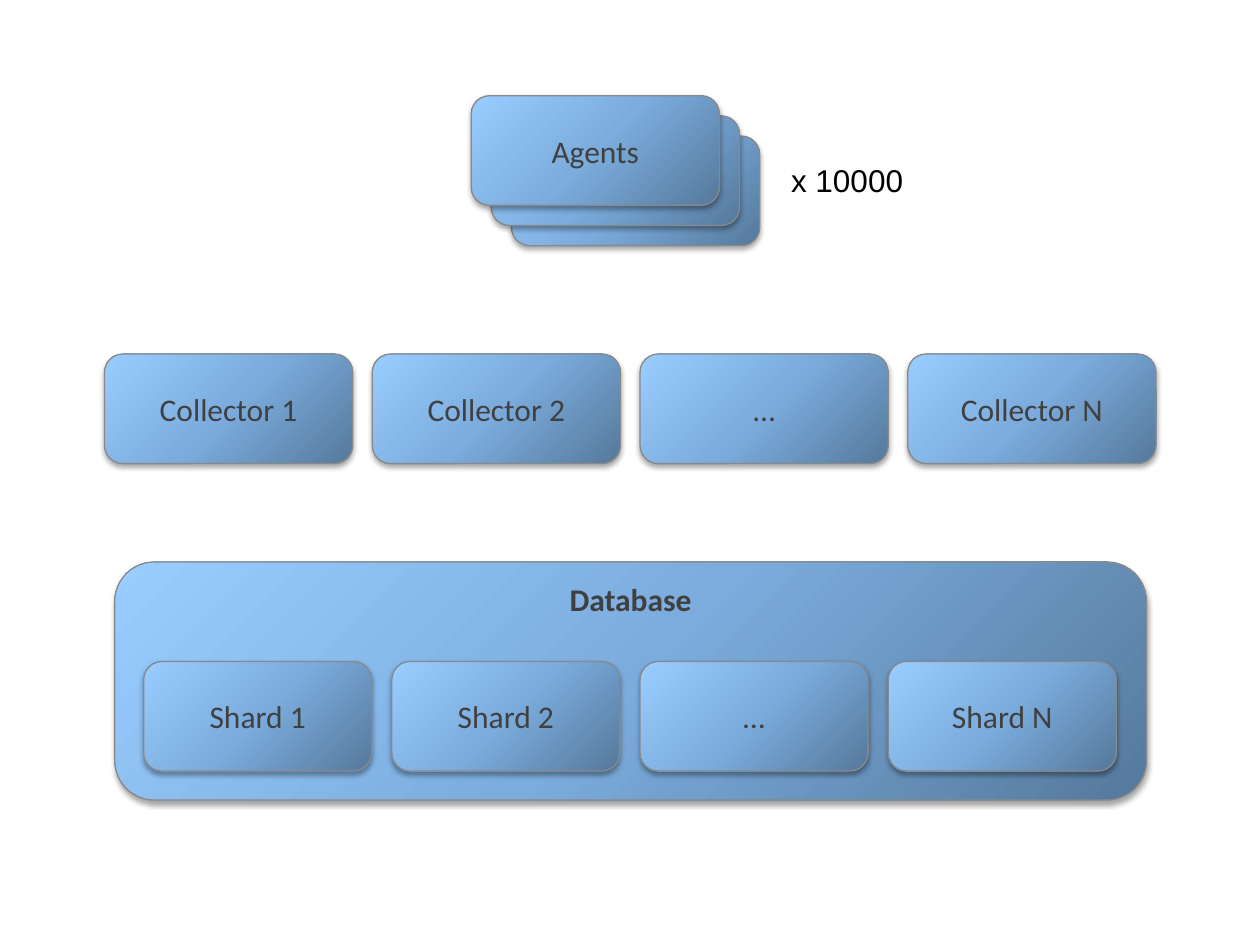
from copy import deepcopy

from lxml import etree
from pptx import Presentation
from pptx.dml.color import RGBColor
from pptx.enum.shapes import MSO_SHAPE as Shape
from pptx.enum.text import MSO_ANCHOR as Anchor, PP_ALIGN as Align
from pptx.oxml import parse_xml
from pptx.oxml.ns import nsdecls, qn
from pptx.util import Inches, Pt

GRADIENT = (
    (0, RGBColor(0x56, 0x79, 0x9C)),
    (0.5, RGBColor(0x7B, 0xAC, 0xDD)),
    (1, RGBColor(0x99, 0xCC, 0xFF)),
)
OUTLINE = RGBColor(0x89, 0x89, 0x89)
LABEL = RGBColor(0x40, 0x40, 0x40)
BLACK = RGBColor(0, 0, 0)

BOX_WIDTH, BOX_HEIGHT = 1.97, 0.87


def write_text(shape, text, font="Calibri", color=LABEL, bold=False,
               align=Align.CENTER, anchor=Anchor.MIDDLE, wrap=True):
    frame = shape.text_frame
    frame.word_wrap = wrap
    frame.vertical_anchor = anchor
    paragraph = frame.paragraphs[0]
    paragraph.alignment = align
    run = paragraph.add_run()
    run.text = text
    run.font.name = font
    run.font.size = Pt(18)
    run.font.bold = bold
    run.font.color.rgb = color


def set_gradient(shape):
    fill = shape.fill
    fill.gradient()
    fill.gradient_angle = 135
    # The default gradient has two stops; add the middle one
    stops = shape.element.spPr.find(".//" + qn("a:gsLst"))
    stops.insert(1, deepcopy(stops[0]))
    for stop, (position, color) in zip(fill.gradient_stops, GRADIENT):
        stop.position = position
        stop.color.rgb = color


def set_shadow(shape):
    shape.shadow.inherit = False
    effects = shape.element.spPr.find(qn("a:effectLst"))
    shadow = parse_xml(
        f'<a:outerShdw {nsdecls("a")} blurRad="{Pt(3.1)}" dist="{Pt(1.8)}"'
        ' dir="5400000" rotWithShape="0"/>')
    color = etree.SubElement(shadow, qn("a:srgbClr"), val="000000")
    etree.SubElement(color, qn("a:alpha"), val="35000")
    effects.append(shadow)


def add_box(slide, left, top, width=BOX_WIDTH, height=BOX_HEIGHT, text=None,
            **text_format):
    shape = slide.shapes.add_shape(
        Shape.ROUNDED_RECTANGLE, Inches(left), Inches(top),
        Inches(width), Inches(height))
    set_gradient(shape)
    shape.line.color.rgb = OUTLINE
    shape.line.width = Pt(0.75)
    set_shadow(shape)
    if text:
        write_text(shape, text, **text_format)


def add_row(slide, labels, left, top, pitch, width):
    for index, label in enumerate(labels):
        add_box(slide, left + index * pitch, top, width, text=label)


def add_agents(slide):
    # Stack from back to front, with the label on the front box
    for depth in (2, 1, 0):
        offset = 0.16 * depth
        add_box(slide, 3.74 + offset, 0.76 + offset,
                text=None if depth else "Agents")
    count = slide.shapes.add_textbox(
        Inches(6.18), Inches(1.23), Inches(1.1), Inches(0.4))
    write_text(count, "x 10000", font="Arial", color=BLACK,
               align=Align.LEFT, anchor=Anchor.TOP, wrap=False)


def main():
    presentation = Presentation()
    presentation.slide_width = Inches(10)
    presentation.slide_height = Inches(7.5)
    slide = presentation.slides.add_slide(presentation.slide_layouts[6])

    add_agents(slide)

    # Collectors
    add_row(slide, ("Collector 1", "Collector 2", "…", "Collector N"),
            left=0.83, top=2.81, pitch=2.125, width=BOX_WIDTH)

    # Database and its shards
    add_box(slide, 0.91, 4.46, 8.19, 1.89, text="Database", bold=True,
            anchor=Anchor.TOP)
    add_row(slide, ("Shard 1", "Shard 2", "…", "Shard N"),
            left=1.14, top=5.25, pitch=1.97, width=1.81)

    presentation.save("out.pptx")


if __name__ == "__main__":
    main()
